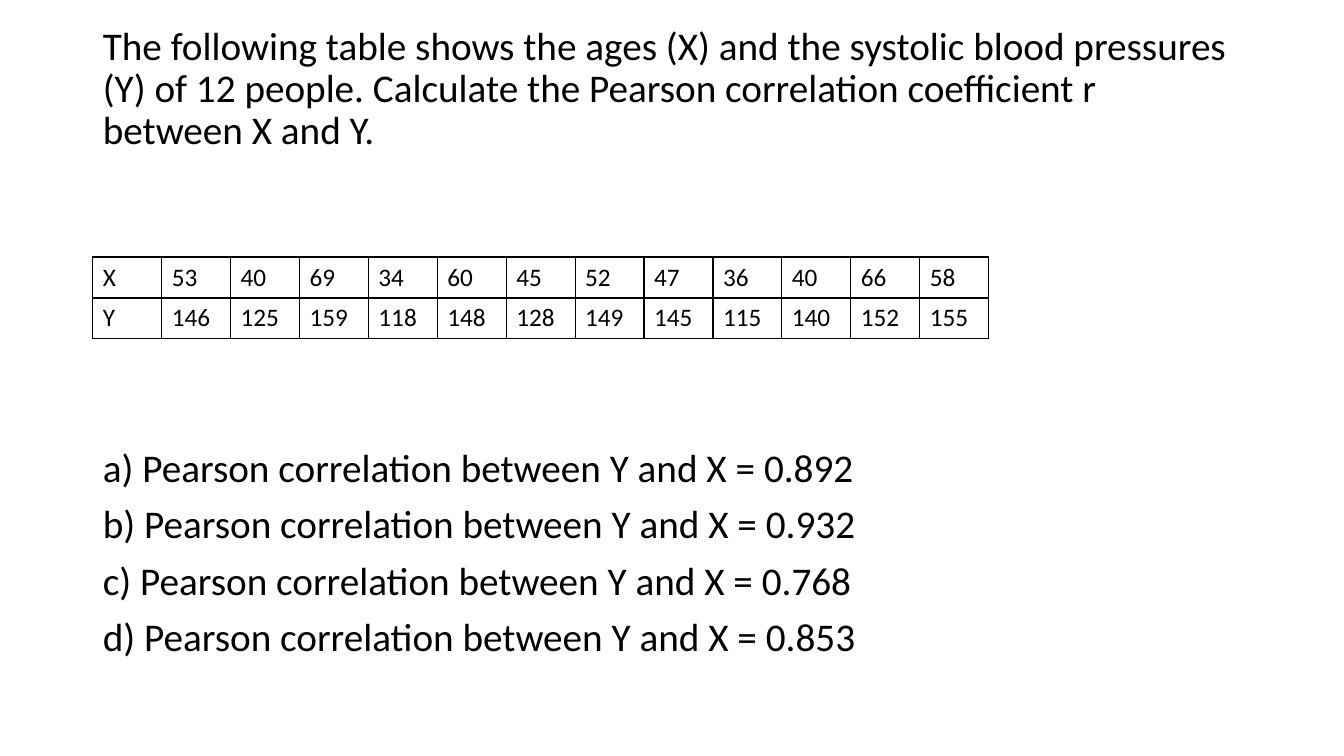
from lxml import etree
from pptx import Presentation
from pptx.dml.color import RGBColor
from pptx.enum.text import MSO_ANCHOR, MSO_AUTO_SIZE, PP_ALIGN
from pptx.oxml.ns import qn
from pptx.util import Inches, Pt

BLACK = RGBColor(0x00, 0x00, 0x00)
FONT = "Calibri"
TOP, LEFT = MSO_ANCHOR.TOP, PP_ALIGN.LEFT
NO_AUTOFIT = MSO_AUTO_SIZE.NONE
TITLE_AND_CONTENT = 1

QUESTION = ("The following table shows the ages (X) and the systolic blood "
            "pressures (Y) of 12 people. Calculate the Pearson correlation "
            "coefficient r between X and Y.")
COEFFICIENTS = {"a": "0.892", "b": "0.932", "c": "0.768", "d": "0.853"}
AGES = [53, 40, 69, 34, 60, 45, 52, 47, 36, 40, 66, 58]
PRESSURES = [146, 125, 159, 118, 148, 128, 149, 145, 115, 140, 152, 155]


def write(paragraph, text, size=28, color=BLACK, line_spacing=None, before=0):
    """Put formatted text into a paragraph."""
    run = paragraph.add_run()
    run.text = text
    run.font.name, run.font.size = FONT, Pt(size)
    run.font.color.rgb = color
    paragraph.alignment = LEFT
    paragraph.space_before = Pt(before)
    if line_spacing:
        paragraph.line_spacing = line_spacing


def remove_bullet(paragraph):
    properties = paragraph._p.get_or_add_pPr()
    properties.set("marL", "0")
    properties.set("indent", "0")
    etree.SubElement(properties, qn("a:buNone"))


def add_borders(cell, width=1, color=BLACK):
    """Draw all four edges; edges come before the fill in the cell."""
    properties = cell._tc.get_or_add_tcPr()
    for index, edge in enumerate(("a:lnL", "a:lnR", "a:lnT", "a:lnB")):
        line = etree.Element(qn(edge), w=str(Pt(width)))
        fill = etree.SubElement(line, qn("a:solidFill"))
        etree.SubElement(fill, qn("a:srgbClr"), val=str(color))
        properties.insert(index, line)


def place_exercise(body, left, top, width, height):
    """Question above, answers below, with room for the table between."""
    body.left, body.top, body.width, body.height = left, top, width, height
    frame = body.text_frame
    frame.word_wrap = True
    frame.auto_size = NO_AUTOFIT
    frame.vertical_anchor = TOP

    answers = [f"{letter}) Pearson correlation between Y and X = {value}"
               for letter, value in COEFFICIENTS.items()]
    table_gap = 211
    spacings = [10, table_gap] + [10] * (len(answers) - 1)
    for index, (text, before) in enumerate(zip([QUESTION] + answers, spacings)):
        paragraph = frame.add_paragraph() if index else frame.paragraphs[0]
        write(paragraph, text, line_spacing=0.9, before=before)
        remove_bullet(paragraph)


def add_data_table(slide, left, top, width, height):
    rows = [["X"] + AGES, ["Y"] + PRESSURES]
    data = slide.shapes.add_table(len(rows), len(rows[0]),
                                  left, top, width, height).table
    data.first_row = data.horz_banding = False
    for row, values in enumerate(rows):
        for column, value in enumerate(values):
            cell = data.cell(row, column)
            cell.fill.background()
            add_borders(cell)
            write(cell.text_frame.paragraphs[0], str(value), size=18)


def main():
    prs = Presentation()
    prs.slide_width, prs.slide_height = Inches(13.33), Inches(7.5)
    slide = prs.slides.add_slide(prs.slide_layouts[TITLE_AND_CONTENT])

    # The slide has no title
    heading = slide.shapes.title._element
    heading.getparent().remove(heading)

    # Question and answers
    margin = Inches(0.92)
    place_exercise(slide.placeholders[1], margin, Inches(0.21),
                   Inches(11.5), Inches(6.54))
    # Ages and blood pressures
    add_data_table(slide, margin, Inches(2.55), Inches(8.89), Inches(0.81))

    prs.save("out.pptx")


if __name__ == "__main__":
    main()
